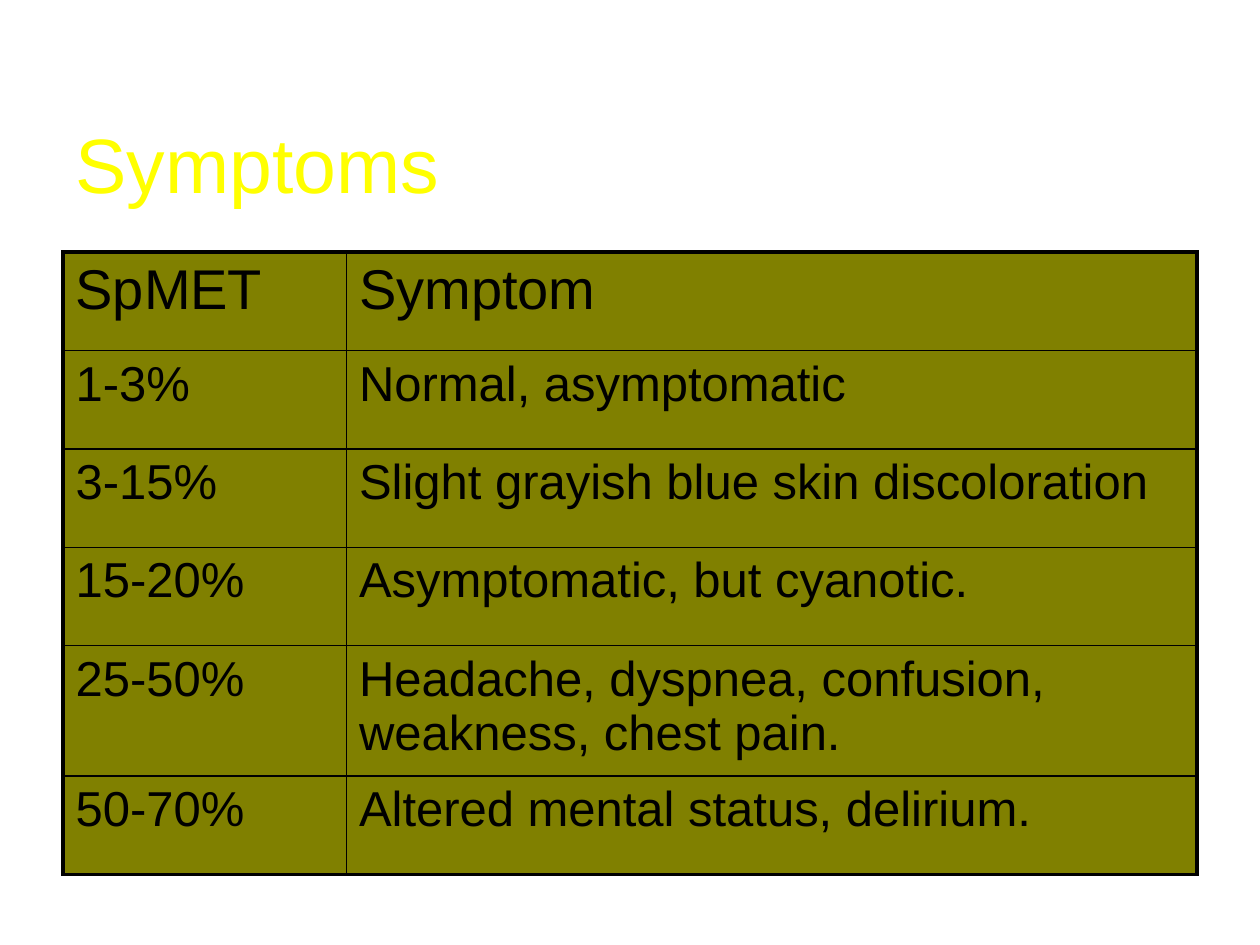
from lxml import etree
from pptx import Presentation
from pptx.dml.color import RGBColor
from pptx.enum.text import MSO_ANCHOR
from pptx.oxml.ns import qn
from pptx.util import Pt

MIDDLE = MSO_ANCHOR.MIDDLE
PX = 9525
COLORS = {"title": "FFFF00", "ink": "000000", "cell": "808000"}

SLIDE_SIZE = (960, 720)
TITLE = "Symptoms"
TITLE_BOX = (48, 64, 864, 120)
TABLE_ORIGIN = (48, 192)
COLUMN_WIDTHS = (216, 648)
ROW_HEIGHT = 75
ROWS = [
    ("SpMET", "Symptom"),
    ("1-3%", "Normal, asymptomatic"),
    ("3-15%", "Slight grayish blue skin discoloration"),
    ("15-20%", "Asymptomatic, but cyanotic."),
    ("25-50%", "Headache, dyspnea, confusion, weakness, chest pain."),
    ("50-70%", "Altered mental status, delirium."),
]
TITLE_FORMAT = {"name": "Arial", "size": Pt(44)}
HEADER_FORMAT = {"name": "Arial", "size": Pt(32)}
BODY_FORMAT = {"name": "Arial", "size": Pt(28)}
OUTER_LINE, INNER_LINE = Pt(2.25), Pt(1)


def emu(lengths):
    return [length * PX for length in lengths]


def write(text_frame, text, font_format, color):
    run = text_frame.paragraphs[0].add_run()
    run.text = text
    for name, value in font_format.items():
        setattr(run.font, name, value)
    run.font.color.rgb = RGBColor.from_string(COLORS[color])
    return run


def add_color(parent, color):
    etree.SubElement(parent, qn("a:srgbClr"), val=COLORS[color])


def add_text_shadow(run):
    effects = etree.Element(qn("a:effectLst"))
    shadow = etree.SubElement(effects, qn("a:outerShdw"), dist="35921", dir="2700000")
    add_color(shadow, "ink")
    run.font.fill._xPr.find(qn("a:solidFill")).addnext(effects)


def set_borders(cell, outer_sides):
    properties = cell._tc.get_or_add_tcPr()
    for index, (side, is_outer) in enumerate(outer_sides.items()):
        width = OUTER_LINE if is_outer else INNER_LINE
        line = etree.Element(qn(f"a:{side}"), w=str(int(width)))
        add_color(etree.SubElement(line, qn("a:solidFill")), "ink")
        properties.insert(index, line)


def add_title(slide):
    shape = slide.shapes.add_textbox(*emu(TITLE_BOX))
    shape.text_frame.word_wrap = True
    shape.text_frame.vertical_anchor = MIDDLE
    add_text_shadow(write(shape.text_frame, TITLE, TITLE_FORMAT, "title"))


def add_symptom_table(slide):
    size = (sum(COLUMN_WIDTHS), ROW_HEIGHT * len(ROWS))
    table = slide.shapes.add_table(
        len(ROWS), len(COLUMN_WIDTHS), *emu(TABLE_ORIGIN + size)
    ).table
    for column, width in zip(table.columns, emu(COLUMN_WIDTHS)):
        column.width = width
    for row, texts in enumerate(ROWS):
        for column, text in enumerate(texts):
            cell = table.cell(row, column)
            write(cell.text_frame, text, BODY_FORMAT if row else HEADER_FORMAT, "ink")
            cell.fill.solid()
            cell.fill.fore_color.rgb = RGBColor.from_string(COLORS["cell"])
            set_borders(cell, {
                "lnL": column == 0,
                "lnR": column == len(texts) - 1,
                "lnT": row == 0,
                "lnB": row == len(ROWS) - 1,
            })


def main():
    presentation = Presentation()
    presentation.slide_width, presentation.slide_height = emu(SLIDE_SIZE)
    slide = presentation.slides.add_slide(presentation.slide_layouts[6])
    add_title(slide)
    add_symptom_table(slide)
    presentation.save("out.pptx")


if __name__ == "__main__":
    main()
